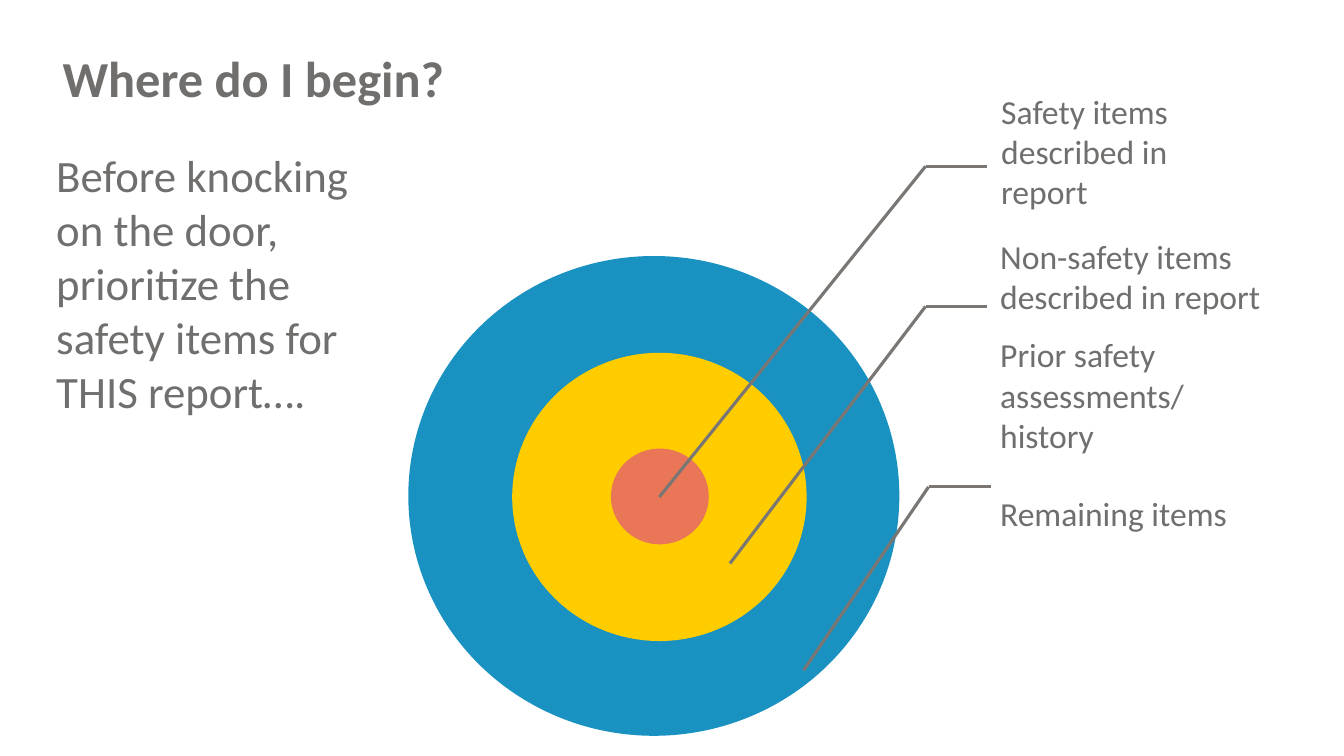
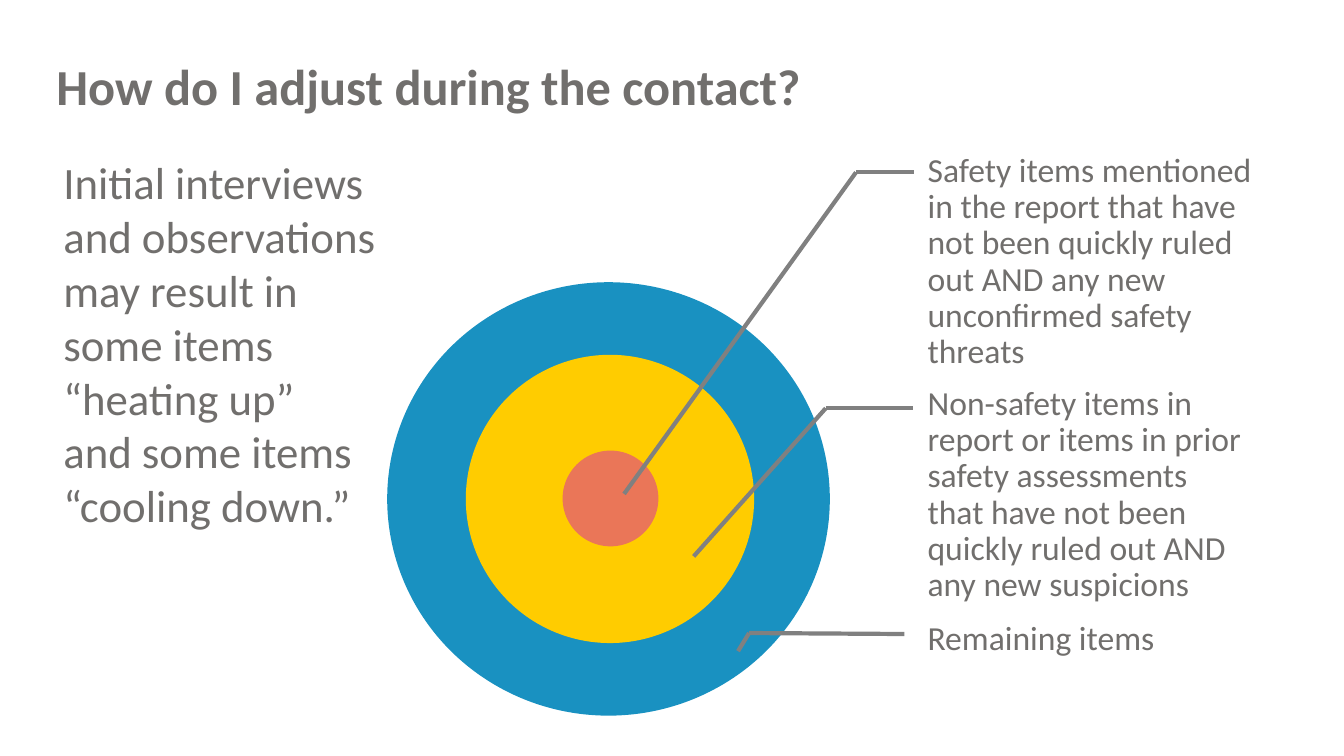
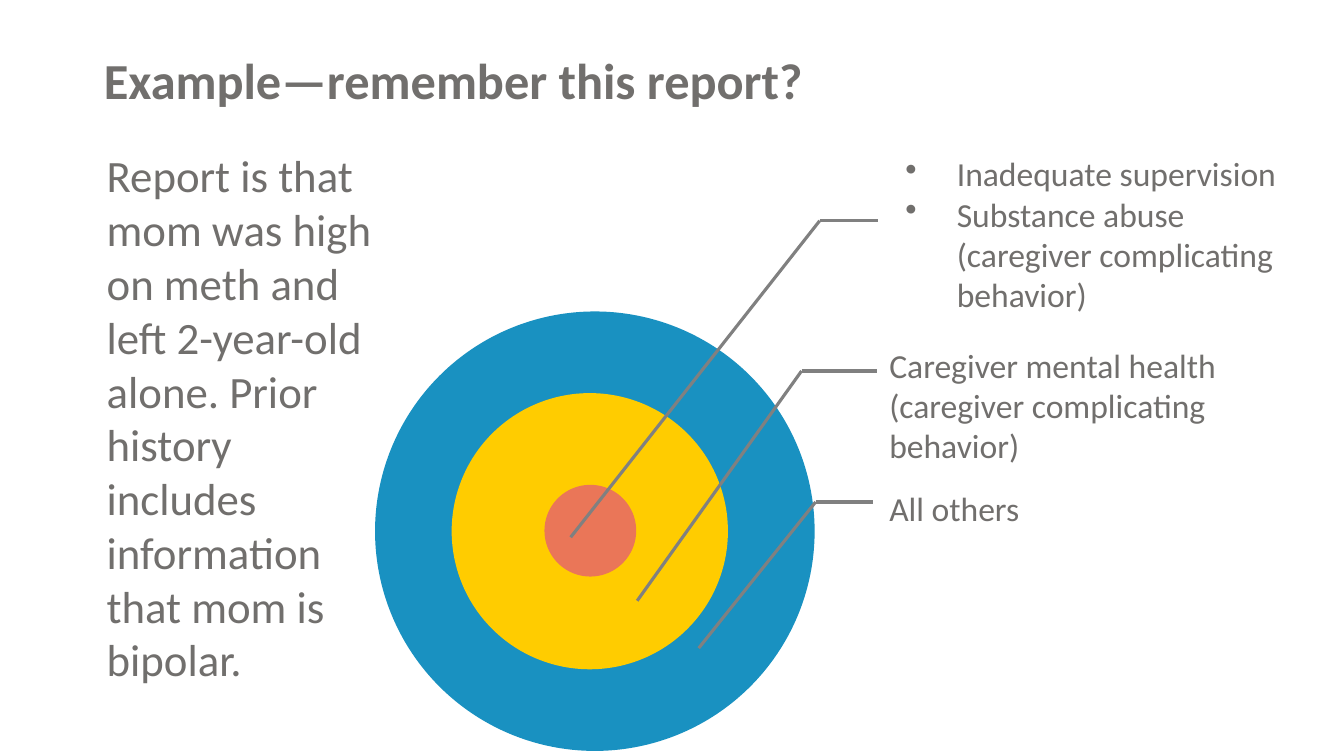
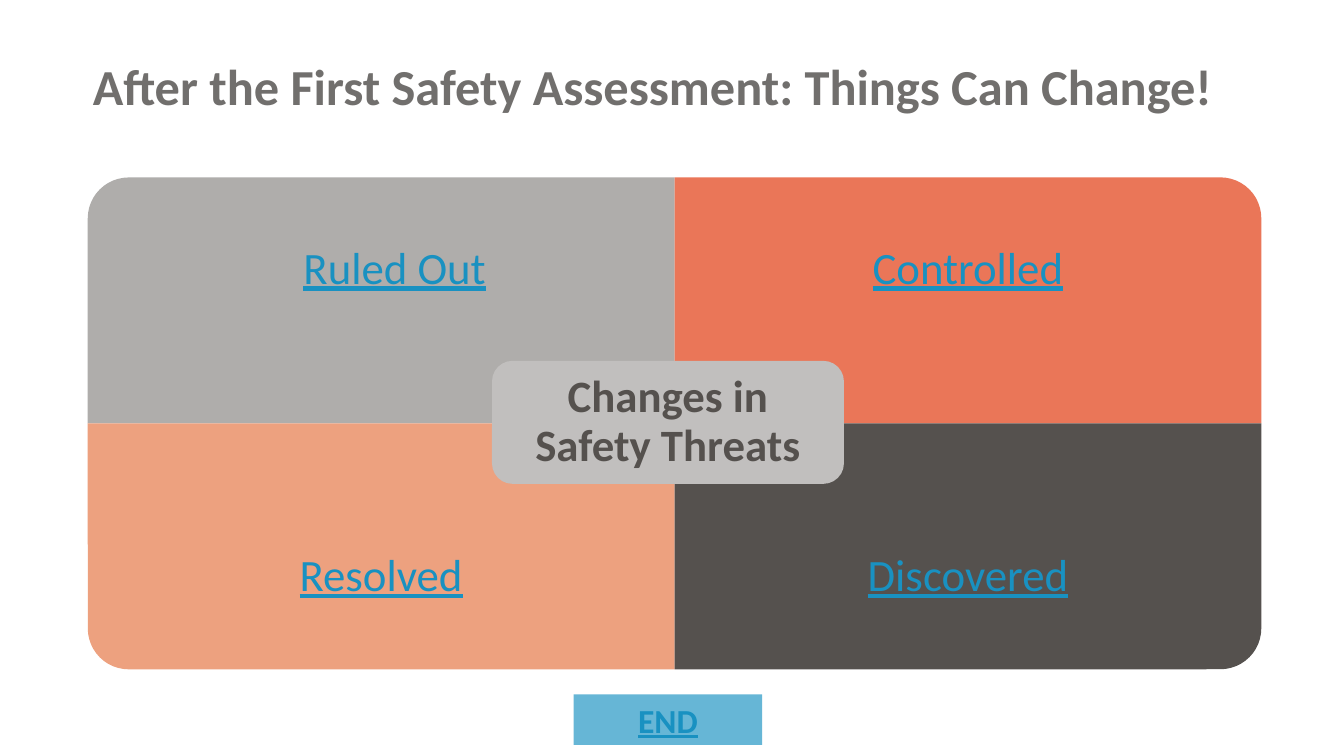
from dataclasses import dataclass

from lxml import etree
from pptx import Presentation
from pptx.dml.color import RGBColor
from pptx.enum import shapes, text
from pptx.oxml import ns
from pptx.util import Inches, Pt

SHAPE = shapes.MSO_SHAPE
TOP, MIDDLE = text.MSO_ANCHOR.TOP, text.MSO_ANCHOR.MIDDLE
LEFT, CENTER = text.PP_ALIGN.LEFT, text.PP_ALIGN.CENTER


@dataclass(frozen=True)
class Theme:
    font: str = "Calibri"
    ink: str = "716F6D"
    blue: str = "1991C1"
    yellow: str = "FFCC00"
    coral: str = "EA7658"
    peach: str = "EDA17F"
    silver: str = "AFADAB"
    pale: str = "C1BFBE"
    dark: str = "55514E"
    sky: str = "66B6D6"
    warm_line: str = "797674"
    gray_line: str = "808080"
    title_size: int = 36
    body_size: int = 32
    label_size: int = 24


THEME = Theme()


def inches(*lengths):
    return [Inches(length) for length in lengths]


class Deck:
    def __init__(self, theme):
        self.theme = theme
        self.prs = Presentation()
        self.prs.slide_width, self.prs.slide_height = inches(13.33, 7.5)
        self.slide = None

    def new_slide(self, title, box):
        self.slide = self.prs.slides.add_slide(self.prs.slide_layouts[5])
        heading = self.slide.shapes.title
        heading.left, heading.top, heading.width, heading.height = inches(*box)
        self.set_text(heading.text_frame, title, self.theme.title_size, bold=True,
                      anchor=MIDDLE, spacing=0.9, insets=(0.35, 0.05, 0.1, 0.05))

    def set_text(self, frame, content, size, color=None, bold=False, underline=False,
                 align=LEFT, anchor=TOP, spacing=1.0, gap=0,
                 insets=(0.1, 0.05, 0.1, 0.05), indent=None):
        """Fill a frame, one paragraph per line; an indent makes it a bulleted list."""
        frame.text = content
        frame.word_wrap = True
        frame.auto_size = text.MSO_AUTO_SIZE.NONE
        frame.vertical_anchor = anchor
        (frame.margin_left, frame.margin_top,
         frame.margin_right, frame.margin_bottom) = inches(*insets)
        for index, paragraph in enumerate(frame.paragraphs):
            if indent:
                self.bullet(paragraph, indent)
            paragraph.alignment = align
            paragraph.line_spacing = spacing
            paragraph.space_before = Pt(gap if index else 0)
            for run in paragraph.runs:
                font = run.font
                font.name, font.size = self.theme.font, Pt(size)
                font.bold, font.underline = bold, underline
                font.color.rgb = RGBColor.from_string(color or self.theme.ink)

    def bullet(self, paragraph, indent):
        props = paragraph._p.get_or_add_pPr()
        props.set("marL", str(Inches(indent)))
        props.set("indent", str(-Inches(indent)))
        etree.SubElement(props, ns.qn("a:buChar")).set("char", "•")

    def textbox(self, content, box, size, **style):
        frame = self.slide.shapes.add_textbox(*inches(*box)).text_frame
        self.set_text(frame, content, size, **style)

    def body(self, content, box):
        self.textbox(content, box, self.theme.body_size)

    def callout(self, content, box, inset=0.14, **style):
        self.textbox(content, box, self.theme.label_size,
                     insets=(inset, 0.03, 0.03, 0.03), **style)

    def shape(self, kind, box, fill):
        shape = self.slide.shapes.add_shape(kind, *inches(*box))
        shape.shadow.inherit = False
        shape.fill.solid()
        shape.fill.fore_color.rgb = RGBColor.from_string(fill)
        shape.line.fill.background()
        return shape

    def target(self, *rings):
        """Draw the rings from the outermost to the bullseye."""
        fills = self.theme.blue, self.theme.yellow, self.theme.coral
        for ring, fill in zip(rings, fills):
            self.shape(SHAPE.OVAL, ring, fill)

    def leaders(self, color, width, *routes):
        """Draw each route from its knee to the label and to the ring."""
        for knee, label, ring in routes:
            for end in (label, ring):
                line = self.slide.shapes.add_connector(
                    shapes.MSO_CONNECTOR.STRAIGHT, *inches(*knee, *end))
                line.line.color.rgb = RGBColor.from_string(color)
                line.line.width = Pt(width)
                etree.SubElement(line._element.spPr, ns.qn("a:effectLst"))

    def quadrant(self, label, column, row, fill, rotation, label_width=5.82):
        """Place a panel whose single round corner faces outwards."""
        width, height, label_height = 5.82, 2.44, 1.83
        left, top = 0.87 + column * width, 1.76 + row * height
        sideways = rotation % 180 != 0
        w, h = (height, width) if sideways else (width, height)
        panel = self.shape(SHAPE.ROUND_1_RECTANGLE,
                           (left + (width - w) / 2, top + (height - h) / 2, w, h), fill)
        panel.rotation = rotation
        label_top = top + row * (height - label_height)
        self.textbox(label, (left, label_top, label_width, label_height),
                     self.theme.body_size, color=self.theme.blue, underline=True,
                     align=CENTER, anchor=MIDDLE, spacing=0.9, insets=(0.25,) * 4)


def where_to_begin(deck):
    deck.new_slide("Where do I begin?", (0.27, 0.19, 11.94, 1.23))
    deck.target((4.05, 2.54, 4.87, 4.76), (5.08, 3.5, 2.92, 2.86),
                (6.06, 4.45, 0.97, 0.95))
    deck.callout("Safety items described in report", (9.79, 0.87, 2.65, 1.26))
    deck.callout("Non-safety items described in report\n"
                 "Prior safety assessments/ history",
                 (9.78, 2.4, 2.83, 2.05), anchor=MIDDLE, gap=12.8)
    deck.callout("Remaining items", (9.78, 4.71, 2.44, 0.76), anchor=MIDDLE)
    deck.leaders(deck.theme.warm_line, 2.25,
                 ((9.18, 1.65), (9.79, 1.65), (6.54, 4.93)),
                 ((9.18, 3.04), (9.79, 3.04), (7.24, 5.59)),
                 ((9.21, 4.83), (9.83, 4.83), (7.97, 6.65)))
    deck.body("Before knocking on the door, prioritize the safety items for "
              "THIS report….", (0.46, 1.42, 3.36, 2.79))


def adjusting(deck):
    deck.new_slide("How do I adjust during the contact?", (0.21, 0.27, 11.65, 1.23))
    deck.callout("Safety items mentioned in the report that have not been quickly "
                 "ruled out AND any new unconfirmed safety threats",
                 (9.06, 1.49, 3.59, 1.84), spacing=0.9)
    deck.callout("Non-safety items in report or items in prior safety assessments "
                 "that have not been quickly ruled out AND any new suspicions",
                 (9.06, 3.87, 3.31, 2.08), anchor=MIDDLE, spacing=0.9)
    deck.callout("Remaining items", (9.06, 6.14, 2.62, 0.46), spacing=0.9)
    deck.target((3.84, 2.8, 4.39, 4.3), (4.62, 3.52, 2.86, 2.86),
                (5.58, 4.47, 0.95, 0.95))
    deck.leaders(deck.theme.gray_line, 3,
                 ((8.49, 1.71), (9.07, 1.71), (6.19, 4.9)),
                 ((8.19, 4.05), (9.06, 4.05), (6.88, 5.52)),
                 ((7.43, 6.28), (8.97, 6.29), (7.32, 6.46)))
    deck.body("Initial interviews and observations may result in some items "
              "“heating up”\vand some items “cooling down.”", (0.53, 1.49, 3.34, 3.87))


def example_report(deck):
    deck.new_slide("Example—remember this report?", (0.68, 0.21, 11.65, 1.23))
    deck.callout("Inadequate supervision\n"
                 "Substance abuse\v(caregiver complicating\vbehavior)",
                 (8.86, 1.49, 3.88, 1.8), inset=0.12, indent=0.51)
    deck.callout("Caregiver mental health\v(caregiver complicating\vbehavior)",
                 (8.7, 3.39, 3.74, 1.33), inset=0.12)
    deck.callout("All others", (8.7, 4.81, 3.74, 1.33), inset=0.12)
    deck.target((3.72, 3.09, 4.36, 4.36), (4.48, 3.9, 2.74, 2.74),
                (5.4, 4.81, 0.91, 0.91))
    deck.leaders(deck.theme.gray_line, 2.25,
                 ((8.13, 2.19), (8.71, 2.19), (5.66, 5.33)),
                 ((7.95, 3.68), (8.7, 3.68), (6.32, 5.96)),
                 ((8.09, 4.98), (8.66, 4.98), (6.93, 6.43)))
    deck.body("Report is that mom was high on meth and left 2-year-old alone. Prior "
              "history includes information that mom is bipolar.", (0.96, 1.42, 3, 5.49))


def things_change(deck):
    theme = deck.theme
    deck.new_slide("After the First Safety Assessment: Things Can Change!",
                   (0.57, 0.27, 12.1, 1.23))
    deck.quadrant("Ruled Out", 0, 0, theme.silver, 270, label_width=6.09)
    deck.quadrant("Controlled", 1, 0, theme.coral, 0)
    deck.quadrant("Resolved", 0, 1, theme.peach, 180)
    deck.quadrant("Discovered", 1, 1, theme.dark, 90)
    hub = deck.shape(SHAPE.ROUNDED_RECTANGLE, (4.88, 3.58, 3.49, 1.22), theme.pale)
    deck.set_text(hub.text_frame, "Changes in Safety Threats", theme.body_size,
                  color=theme.dark, bold=True, align=CENTER, anchor=MIDDLE,
                  spacing=0.9, insets=(0.13,) * 4)
    end = deck.shape(SHAPE.RECTANGLE, (5.69, 6.89, 1.87, 0.5), theme.sky)
    deck.set_text(end.text_frame, "END", theme.label_size, color=theme.blue,
                  bold=True, underline=True, align=CENTER, anchor=MIDDLE)


def main():
    deck = Deck(THEME)
    for build in (where_to_begin, adjusting, example_report, things_change):
        build(deck)
    deck.prs.save("out.pptx")


if __name__ == "__main__":
    main()
